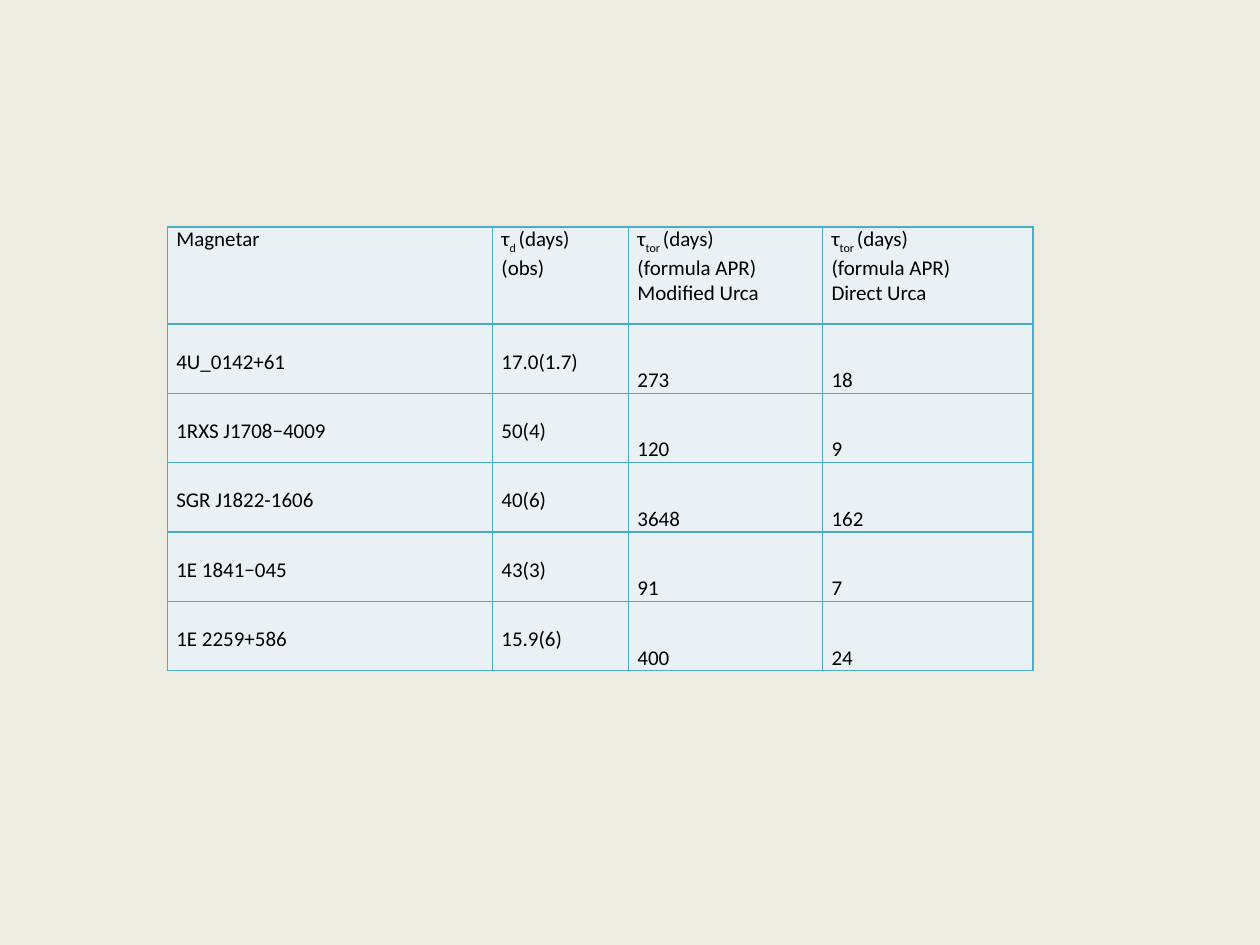
from dataclasses import dataclass

from lxml.etree import SubElement
from pptx import Presentation
from pptx.dml.color import RGBColor
from pptx.enum.text import MSO_ANCHOR, PP_ALIGN
from pptx.oxml.ns import qn
from pptx.util import Inches, Pt


@dataclass(frozen=True)
class Theme:
    background: str = "EEECE1"
    cell: str = "E9F1F5"
    border: str = "4BACC6"
    ink: str = "000000"
    font: str = "Calibri"
    body_size: float = 12
    border_width: float = 1
    subscript: int = -25  # percent of the type size
    side_inset: float = 0.07
    label_drop: float = 0.2  # one text line above the name and observed value


THEME = Theme()
SLIDE_WIDTH, SLIDE_HEIGHT = Inches(10), Inches(7.5)
TABLE_BOX = (0.133, 0.24, 0.687, 0.47)  # shares of the slide
COLUMN_WEIGHTS = (2.58, 1.08, 1.54, 1.67)
ROW_WEIGHTS = (0.77, 0.55, 0.55, 0.55, 0.55, 0.55)

# Each heading is a list of lines; a tuple is (symbol, subscript, unit).
HEADINGS = (
    ["Magnetar"],
    [("τ", "d ", "(days)"), "(obs)"],
    [("τ", "tor ", "(days)"), "(formula APR)", "Modified Urca"],
    [("τ", "tor ", "(days)"), "(formula APR)", "Direct Urca"],
)
MAGNETARS = (
    ("4U_0142+61", "17.0(1.7)", "273", "18"),
    ("1RXS J1708−4009", "50(4)", "120", "9"),
    ("SGR J1822-1606", "40(6)", "3648", "162"),
    ("1E 1841−045", "43(3)", "91", "7"),
    ("1E 2259+586", "15.9(6)", "400", "24"),
)
LABEL_COLUMNS = 2


def rgb(code):
    return RGBColor.from_string(code)


def add_borders(cell):
    properties = cell._tc.get_or_add_tcPr()
    for side in ("a:lnL", "a:lnR", "a:lnT", "a:lnB"):
        line = SubElement(properties, qn(side), w=str(Pt(THEME.border_width)))
        fill = SubElement(line, qn("a:solidFill"))
        SubElement(fill, qn("a:srgbClr"), val=THEME.border)


def style_cell(cell, top_inset=0, anchor=MSO_ANCHOR.TOP):
    add_borders(cell)
    cell.fill.solid()
    cell.fill.fore_color.rgb = rgb(THEME.cell)
    cell.margin_left = cell.margin_right = Inches(THEME.side_inset)
    cell.margin_top, cell.margin_bottom = Inches(top_inset), 0
    cell.vertical_anchor = anchor


def write_line(paragraph, line, alignment):
    paragraph.alignment = alignment
    parts = (line,) if isinstance(line, str) else line
    for position, part in enumerate(parts):
        run = paragraph.add_run()
        run.text = part
        run.font.name = THEME.font
        run.font.size = Pt(THEME.body_size)
        run.font.color.rgb = rgb(THEME.ink)
        if position == 1:
            run._r.get_or_add_rPr().set("baseline", str(THEME.subscript * 1000))


def fill_heading(cell, lines):
    style_cell(cell)
    frame = cell.text_frame
    for index, line in enumerate(lines):
        paragraph = frame.add_paragraph() if index else frame.paragraphs[0]
        write_line(paragraph, line, PP_ALIGN.JUSTIFY)


def fill_value(cell, value, is_label):
    if is_label:
        style_cell(cell, top_inset=THEME.label_drop)
    else:
        style_cell(cell, anchor=MSO_ANCHOR.BOTTOM)
    alignment = PP_ALIGN.JUSTIFY if is_label else PP_ALIGN.LEFT
    write_line(cell.text_frame.paragraphs[0], value, alignment)


def share_out(tracks, attribute, weights, total):
    for track, weight in zip(tracks, weights):
        setattr(track, attribute, int(total * weight / sum(weights)))


def add_decay_table(slide, left, top, width, height):
    table = slide.shapes.add_table(
        len(ROW_WEIGHTS), len(COLUMN_WEIGHTS), left, top, width, height
    ).table
    table.first_row = table.horz_banding = False
    share_out(table.columns, "width", COLUMN_WEIGHTS, width)
    share_out(table.rows, "height", ROW_WEIGHTS, height)
    for column, lines in enumerate(HEADINGS):
        fill_heading(table.cell(0, column), lines)
    for row, magnetar in enumerate(MAGNETARS, start=1):
        for column, value in enumerate(magnetar):
            fill_value(table.cell(row, column), value, column < LABEL_COLUMNS)


def main():
    deck = Presentation()
    deck.slide_width, deck.slide_height = SLIDE_WIDTH, SLIDE_HEIGHT
    slide = deck.slides.add_slide(deck.slide_layouts[6])
    slide.background.fill.solid()
    slide.background.fill.fore_color.rgb = rgb(THEME.background)
    extents = (SLIDE_WIDTH, SLIDE_HEIGHT) * 2
    box = [int(share * extent) for share, extent in zip(TABLE_BOX, extents)]
    add_decay_table(slide, *box)
    deck.save("out.pptx")


if __name__ == "__main__":
    main()
